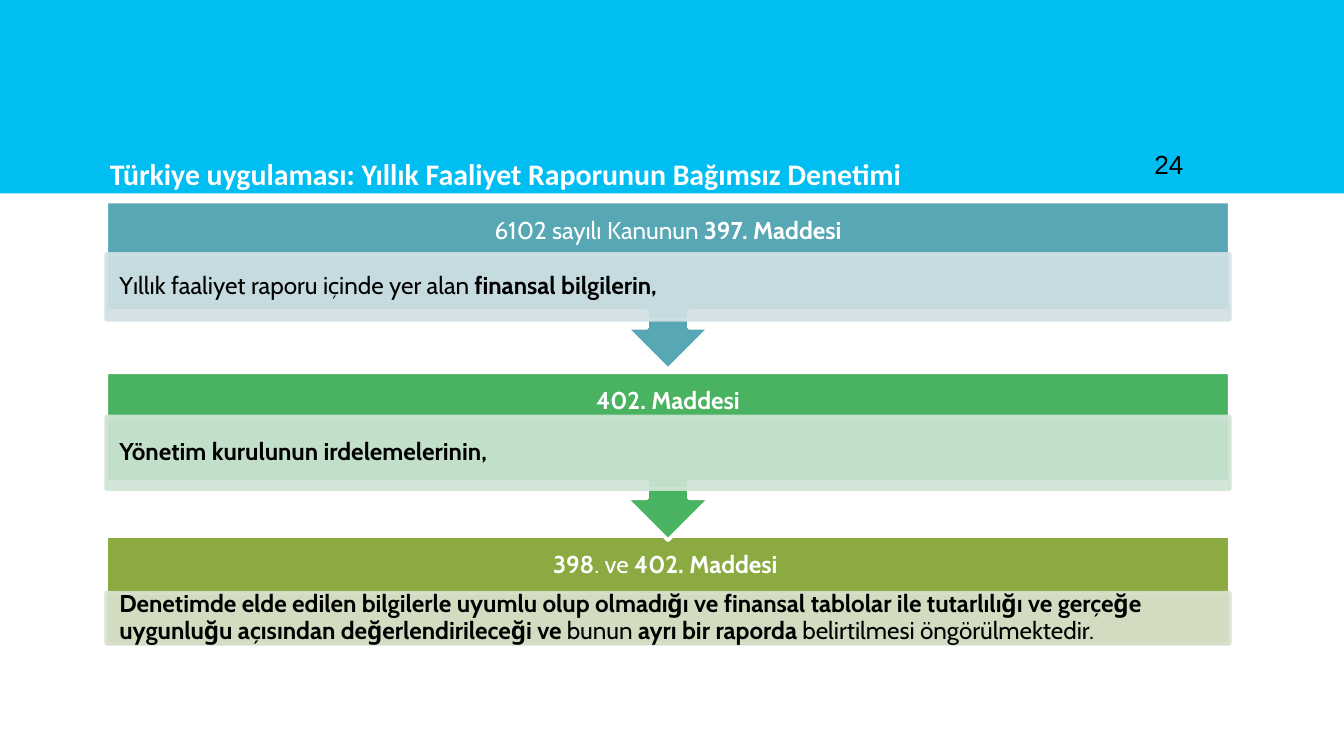
from dataclasses import dataclass

from lxml.etree import SubElement
from pptx import Presentation
from pptx.dml.color import RGBColor
from pptx.enum.shapes import MSO_SHAPE
from pptx.enum.text import MSO_ANCHOR, PP_ALIGN
from pptx.oxml.ns import qn
from pptx.util import Inches, Pt


@dataclass(frozen=True)
class Theme:
    band: str = "00BEF2"
    light: str = "FFFFFF"
    dark: str = "000000"
    body_font: str = "Cabin"
    title_font: str = "Calibri"
    number_font: str = "Arial"
    body_size: float = 13
    title_size: float = 16
    number_size: float = 14
    outline: float = 2
    opacity: int = 90


@dataclass(frozen=True)
class Span:
    text: str
    bold: bool = False


@dataclass(frozen=True)
class Stage:
    top: float
    height: float
    detail_top: float
    detail_height: float
    color: str
    tint: str
    heading: tuple[Span, ...]
    detail: tuple[Span, ...]
    has_arrow: bool = True


THEME = Theme()
LEFT, WIDTH, HEADING_HEIGHT = 0.79, 8.36, 0.44

STAGES = (
    Stage(1.5, 1.25, 1.89, 0.49, "57A7B5", "D1E1E5",
          (Span("6102 sayılı Kanunun "), Span("397. Maddesi", True)),
          (Span("Yıllık faaliyet raporu içinde yer alan "),
           Span("finansal bilgilerin,", True))),
    Stage(2.77, 1.25, 3.1, 0.54, "4AB362", "D0E4D6",
          (Span("402. Maddesi", True),),
          (Span("Yönetim kurulunun irdelemelerinin,", True),)),
    Stage(3.99, 0.82, 4.41, 0.38, "8BAB42", "DAE2CF",
          (Span("398", True), Span(". ve "), Span("402. Maddesi ", True)),
          (Span("Denetimde elde edilen bilgilerle uyumlu olup olmadığı ve finansal "
                "tablolar ile tutarlılığı ve gerçeğe uygunluğu açısından "
                "değerlendirileceği ve ", True),
           Span("bunun "), Span("ayrı bir raporda ", True),
           Span("belirtilmesi öngörülmektedir.")),
          has_arrow=False),
)


def write(shape, spans: tuple[Span, ...], font: str, size: float, color: str,
          anchor=MSO_ANCHOR.MIDDLE, align=PP_ALIGN.LEFT, spacing: float = 1,
          inset: float = 0.1, bottom: float = 0.1) -> None:
    frame = shape.text_frame
    frame.word_wrap = True
    frame.vertical_anchor = anchor
    frame.margin_left = frame.margin_right = Inches(0.1)
    frame.margin_top, frame.margin_bottom = Inches(inset), Inches(bottom)
    paragraph = frame.paragraphs[0]
    paragraph.alignment = align
    paragraph.line_spacing = spacing
    for span in spans:
        run = paragraph.add_run()
        run.text = span.text
        run.font.name = font
        run.font.size = Pt(size)
        run.font.bold = span.bold
        run.font.color.rgb = RGBColor.from_string(color)


def add_block(page, kind, left: float, top: float, width: float, height: float,
              fill: str, line: str | None = None, opacity: int = 100):
    shape = page.shapes.add_shape(
        kind, Inches(left), Inches(top), Inches(width), Inches(height))
    shape.shadow.inherit = False
    shape.fill.solid()
    shape.fill.fore_color.rgb = RGBColor.from_string(fill)
    if line is None:
        shape.line.fill.background()
    else:
        shape.line.color.rgb = RGBColor.from_string(line)
        shape.line.width = Pt(THEME.outline)
    if opacity < 100:
        for color in shape.element.spPr.iter(qn("a:srgbClr")):
            SubElement(color, qn("a:alpha")).set("val", str(opacity * 1000))
    return shape


def add_text(page, left: float, top: float, width: float, height: float):
    return page.shapes.add_textbox(
        Inches(left), Inches(top), Inches(width), Inches(height))


def add_stage(page, stage: Stage) -> None:
    kind = MSO_SHAPE.UP_ARROW_CALLOUT if stage.has_arrow else MSO_SHAPE.RECTANGLE
    block = add_block(page, kind, LEFT, stage.top, WIDTH, stage.height,
                      stage.color, THEME.light)
    block.rotation = 180 if stage.has_arrow else 0
    heading = add_text(page, LEFT, stage.top, WIDTH, HEADING_HEIGHT)
    write(heading, stage.heading, THEME.body_font, THEME.body_size, THEME.light,
          align=PP_ALIGN.CENTER, spacing=0.9)
    detail = add_block(page, MSO_SHAPE.RECTANGLE, LEFT, stage.detail_top, WIDTH,
                       stage.detail_height, stage.tint, stage.tint, THEME.opacity)
    write(detail, stage.detail, THEME.body_font, THEME.body_size, THEME.dark,
          spacing=0.9, inset=0.02, bottom=0.02)


def main() -> None:
    deck = Presentation()
    deck.slide_width = Inches(10)
    deck.slide_height = deck.slide_width * 9 // 16
    page = deck.slides.add_slide(deck.slide_layouts[6])
    add_block(page, MSO_SHAPE.RECTANGLE, 0, 0, 10, 1.44, THEME.band)
    for stage in reversed(STAGES):
        add_stage(page, stage)
    title = add_text(page, 0.72, 1.01, 7.8, 0.73)
    write(title, (Span("Türkiye uygulaması: Yıllık Faaliyet Raporunun Bağımsız Denetimi",
                       True),),
          THEME.title_font, THEME.title_size, THEME.light,
          anchor=MSO_ANCHOR.BOTTOM, bottom=0.46)
    number = add_text(page, 8.49, 0.71, 0.6, 0.73)
    write(number, (Span("24"),), THEME.number_font, THEME.number_size, THEME.dark,
          anchor=MSO_ANCHOR.BOTTOM)
    deck.save("out.pptx")


if __name__ == "__main__":
    main()
